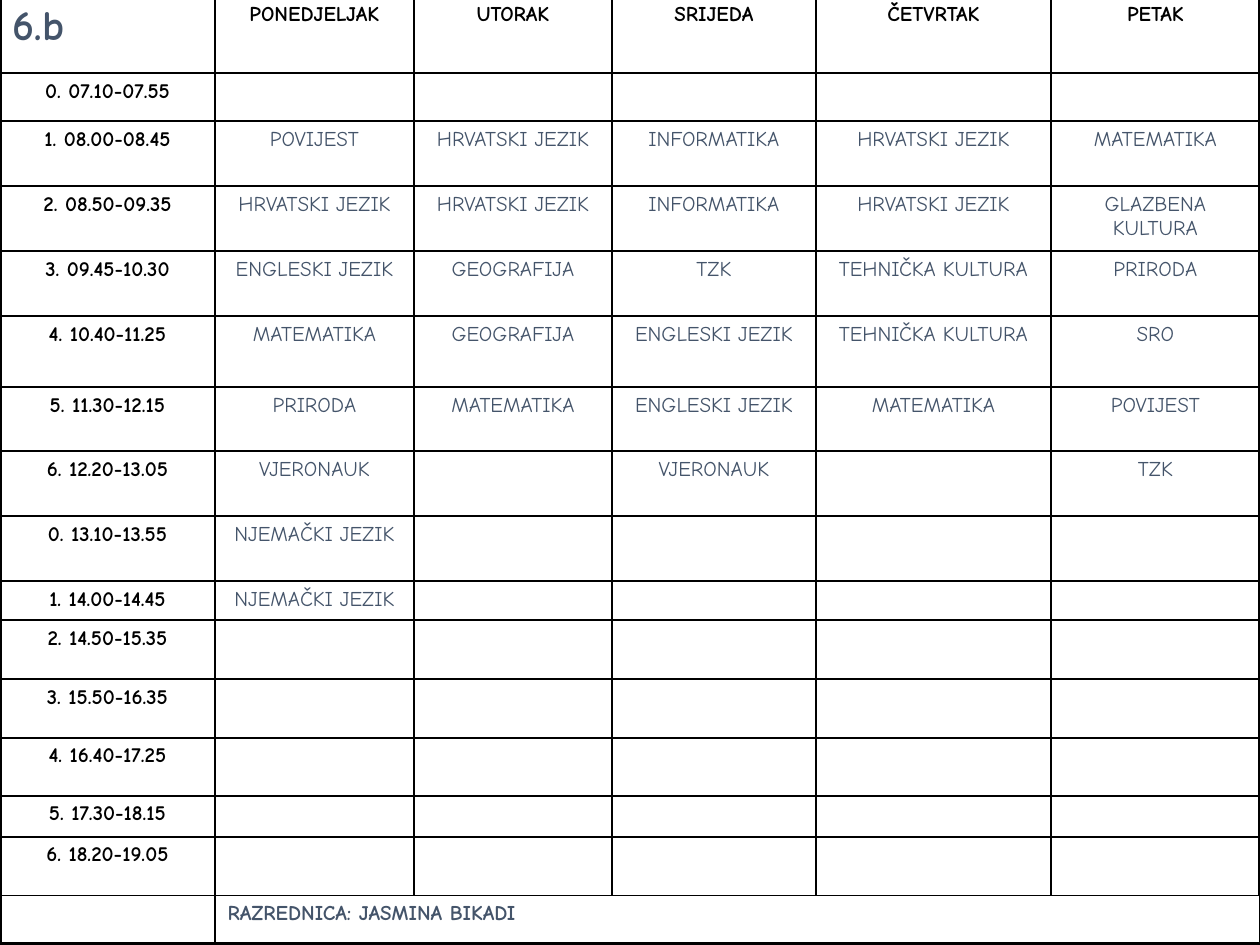
from lxml.etree import SubElement
from pptx import Presentation
from pptx.dml.color import RGBColor
from pptx.enum.text import PP_ALIGN
from pptx.oxml.ns import qn
from pptx.util import Pt

PX = 914400 // 126
FONT = "Comic Neue"
COLORS = {"ink": "000000", "slate": "44546A"}
THIN, THICK = 1, 2.25

COLS = [215, 199, 198, 204, 235, 209]
ROWS = [77, 48, 65, 65, 65, 71, 64, 65, 65, 39, 59, 59, 58, 41, 59, 48]
DAYS = ["PONEDJELJAK", "UTORAK", "SRIJEDA", "ČETVRTAK", "PETAK"]
HOURS = [
    ("0. 07.10-07.55", []),
    ("1. 08.00-08.45", ["POVIJEST", "HRVATSKI JEZIK", "INFORMATIKA",
                        "HRVATSKI JEZIK", "MATEMATIKA"]),
    ("2. 08.50-09.35", ["HRVATSKI JEZIK", "HRVATSKI JEZIK", "INFORMATIKA",
                        "HRVATSKI JEZIK", "GLAZBENA KULTURA"]),
    ("3. 09.45-10.30", ["ENGLESKI JEZIK", "GEOGRAFIJA", "TZK",
                        "TEHNIČKA KULTURA", "PRIRODA"]),
    ("4. 10.40-11.25", ["MATEMATIKA", "GEOGRAFIJA", "ENGLESKI JEZIK",
                        "TEHNIČKA KULTURA", "SRO"]),
    ("5. 11.30-12.15", ["PRIRODA", "MATEMATIKA", "ENGLESKI JEZIK",
                        "MATEMATIKA", "POVIJEST"]),
    ("6. 12.20-13.05", ["VJERONAUK", "", "VJERONAUK", "", "TZK"]),
    ("0. 13.10-13.55", ["NJEMAČKI JEZIK"]),
    ("1. 14.00-14.45", ["NJEMAČKI JEZIK"]),
    ("2. 14.50-15.35", []),
    ("3. 15.50-16.35", []),
    ("4. 16.40-17.25", []),
    ("5. 17.30-18.15", []),
    ("6. 18.20-19.05", []),
]


def add_grid(slide):
    frame = slide.shapes.add_table(len(ROWS), len(COLS), 0, -4 * PX,
                                   sum(COLS) * PX, sum(ROWS) * PX)
    table = frame.table
    table.first_row = table.horz_banding = False
    for col, width in zip(table.columns, COLS):
        col.width = width * PX
    for row, height in zip(table.rows, ROWS):
        row.height = height * PX
    return table


def frame_cells(table):
    """Rule every cell, with a heavier outer edge and no fill."""
    last_row, last_col = len(ROWS) - 1, len(COLS) - 1
    for r, row in enumerate(table.rows):
        for c, cell in enumerate(row.cells):
            props = cell._tc.get_or_add_tcPr()
            outer = {"L": c == 0, "R": c == last_col,
                     "T": r == 0, "B": r == last_row}
            for side, edge in outer.items():
                width = Pt(THICK if edge else THIN)
                line = SubElement(props, qn("a:ln" + side), w=str(width))
                fill = SubElement(line, qn("a:solidFill"))
                SubElement(fill, qn("a:srgbClr"), val=COLORS["ink"])
            cell.fill.background()


def write(cell, text, color="ink", bold=True, size=12, align=PP_ALIGN.CENTER):
    para = cell.text_frame.paragraphs[0]
    para.text = text
    para.alignment = align
    for run in para.runs:
        font = run.font
        font.name, font.size, font.bold = FONT, Pt(size), bold
        font.color.rgb = RGBColor.from_string(COLORS[color])
    # The end mark keeps empty cells from stretching their row
    end = SubElement(para._p, qn("a:endParaRPr"), sz=str(size * 100))
    SubElement(end, qn("a:latin"), typeface=FONT)


def fill_hours(table):
    for r, (hour, lessons) in enumerate(HOURS, 1):
        write(table.cell(r, 0), hour)
        for c in range(1, len(COLS)):
            lesson = lessons[c - 1] if c <= len(lessons) else ""
            write(table.cell(r, c), lesson, "slate", False)


def fill_ends(table):
    """Write the class and days on top, the class teacher at the foot."""
    write(table.cell(0, 0), "6.b", "slate", size=24, align=PP_ALIGN.LEFT)
    for c, day in enumerate(DAYS, 1):
        write(table.cell(0, c), day)
    foot = len(ROWS) - 1
    table.cell(foot, 1).merge(table.cell(foot, len(COLS) - 1))
    write(table.cell(foot, 0), "")
    write(table.cell(foot, 1), "RAZREDNICA: JASMINA BIKADI", "slate",
          align=PP_ALIGN.LEFT)


def main():
    deck = Presentation()
    deck.slide_width, deck.slide_height = 1260 * PX, 945 * PX
    slide = deck.slides.add_slide(deck.slide_layouts[6])
    table = add_grid(slide)
    frame_cells(table)
    fill_ends(table)
    fill_hours(table)
    deck.save("out.pptx")


if __name__ == "__main__":
    main()
